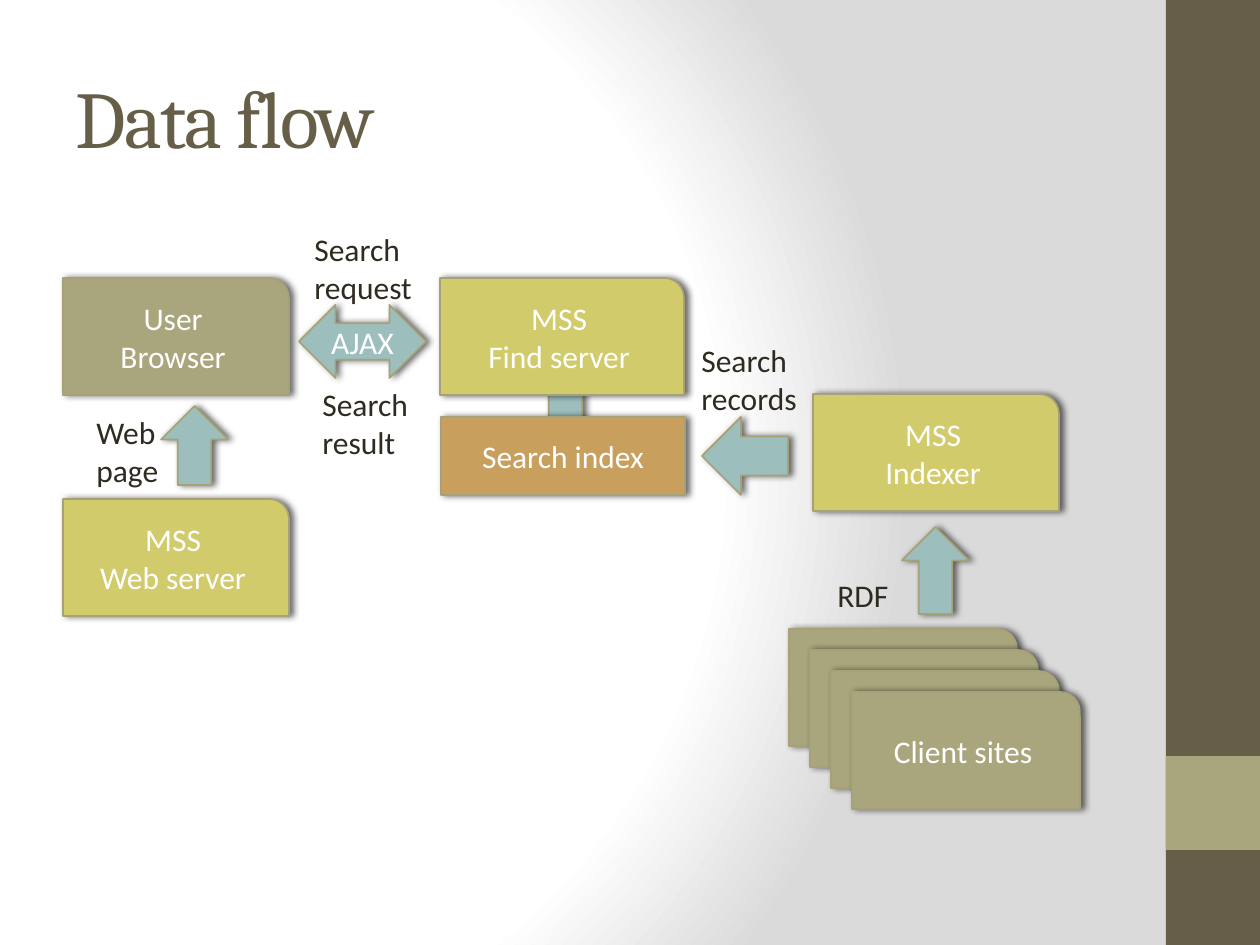
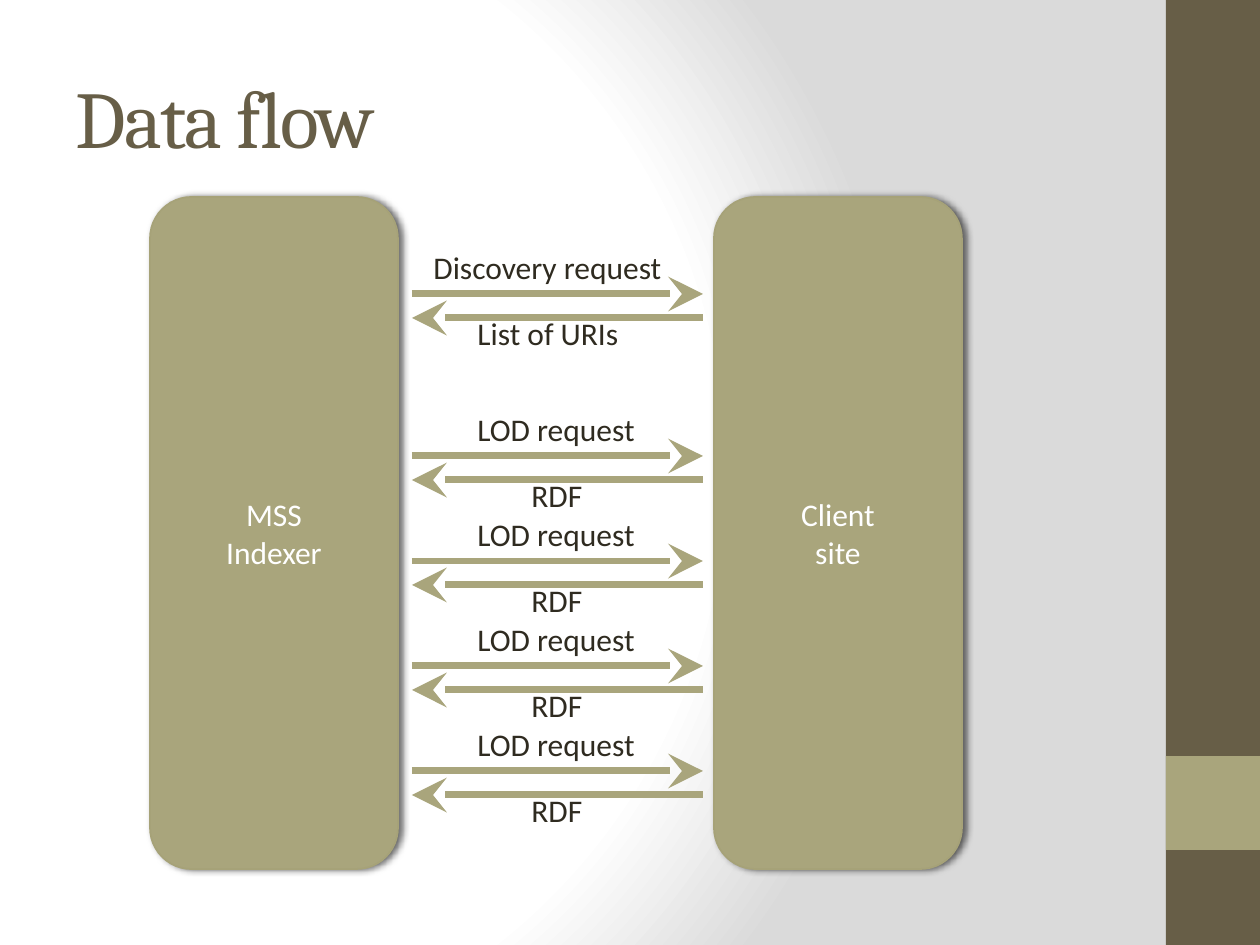
from lxml.etree import SubElement
from pptx import Presentation
from pptx.dml.color import RGBColor
from pptx.enum.shapes import MSO_CONNECTOR, MSO_SHAPE as Preset
from pptx.enum.text import MSO_ANCHOR, MSO_AUTO_SIZE, PP_ALIGN
from pptx.oxml import parse_xml
from pptx.oxml.ns import nsdecls, qn
from pptx.util import Emu, Pt

PX = 914400 / 126
COLORS = {
    "brown": "675E47", "olive": "A9A57C", "outline": "A6A278",
    "lime": "D2CB6C", "amber": "C89F5D", "teal": "9CBEBD",
    "ink": "2F2B20", "white": "FFFFFF", "gray": "DADADA", "black": "000000",
}
BODY_FONT, TITLE_FONT = "Calibri", "Cambria"

TITLE = "Data flow"
TITLE_BOX = (63, 38, 1050, 157)
BANDS = [("brown", (1166, 0, 94, 945)), ("olive", (1166, 756, 94, 94))]

# Parts of the system, back to front: preset, fill, box, text
SYSTEM_PARTS = [
    (Preset.UP_ARROW, "teal", (532, 352, 67, 87), ""),
    (Preset.ROUND_1_RECTANGLE, "olive", (63, 278, 226, 117), "User\nBrowser"),
    (Preset.ROUND_1_RECTANGLE, "lime", (63, 499, 226, 117), "MSS\nWeb server"),
    (Preset.ROUND_1_RECTANGLE, "lime", (440, 278, 244, 117), "MSS\nFind server"),
    (Preset.RECTANGLE, "amber", (441, 417, 244, 78), "Search index"),
    (Preset.UP_ARROW, "teal", (161, 406, 67, 79), ""),
    (Preset.LEFT_RIGHT_ARROW, "teal", (299, 305, 127, 73), "AJAX"),
    (Preset.ROUND_1_RECTANGLE, "lime", (813, 394, 246, 117), "MSS\nIndexer"),
    (Preset.UP_ARROW, "teal", (902, 527, 67, 87), ""),
    (Preset.LEFT_ARROW, "teal", (702, 417, 86, 78), ""),
]
CLIENT_SITES = ["", "", "", "Client sites"]
SITE_BOX, SITE_STEP = (789, 629, 228, 117), 21
FLOW_LABELS = [
    ("Search\nresult", (310, 379, 112, 89)),
    ("Search\nrequest", (302, 224, 125, 89)),
    ("Search\nrecords", (689, 335, 122, 89)),
    ("RDF", (825, 570, 77, 50)),
]
WEB_PAGE = ("Web page", (84, 407, 89, 89))

PARTIES = [("MSS\nIndexer", 150), ("Client\nsite", 714)]
PARTY_TOP, PARTY_SIZE = 197, (248, 672)
# Label text, left and width
DISCOVERY = (("Discovery request", 421, 257), ("List of URIs", 465, 169))
LOD = (("LOD request", 465, 186), ("RDF", 519, 77))
LOD_COUNT, LOD_TOP, LOD_STEP = 4, 456, 105
EXCHANGES = [(294, DISCOVERY)] + [
    (LOD_TOP + LOD_STEP * number, LOD) for number in range(LOD_COUNT)]
LANE_LEFT, LANE_RIGHT, REPLY_GAP = 412, 703, 24
REQUEST_LABEL_RISE, REPLY_LABEL_DROP, LABEL_HEIGHT = 52, 14, 50


def emu(*lengths):
    return [Emu(round(length * PX)) for length in lengths]


def rgb(color):
    return RGBColor.from_string(COLORS[color])


def style_text(frame, size, font, color, align):
    for paragraph in frame.paragraphs:
        paragraph.alignment = align
        paragraph.font.size = Pt(size)
        paragraph.font.name = font
        paragraph.font.color.rgb = rgb(color)


def add_part(shapes, preset, fill, box, text):
    """Add an outlined shape with a soft shadow and centred white text."""
    part = shapes.add_shape(preset, *emu(*box))
    part.fill.solid()
    part.fill.fore_color.rgb = rgb(fill)
    part.line.color.rgb = rgb("outline")
    part.line.width = Pt(1)
    part.shadow.inherit = False
    effects = part.element.spPr.find(qn("a:effectLst"))
    shadow = SubElement(effects, qn("a:outerShdw"), blurRad=str(Pt(4)),
                        dist=str(Pt(2)), dir="0", rotWithShape="0")
    tint = SubElement(shadow, qn("a:srgbClr"), val=COLORS["black"])
    SubElement(tint, qn("a:alpha"), val="60000")
    if text:
        frame = part.text_frame
        frame.text = text
        frame.word_wrap = False
        frame.vertical_anchor = MSO_ANCHOR.MIDDLE
        style_text(frame, 18, BODY_FONT, "white", PP_ALIGN.CENTER)


def add_label(shapes, text, box, wrap=False):
    frame = shapes.add_textbox(*emu(*box)).text_frame
    frame.text = text
    frame.word_wrap = wrap
    frame.auto_size = MSO_AUTO_SIZE.SHAPE_TO_FIT_TEXT
    style_text(frame, 18, BODY_FONT, "ink", PP_ALIGN.LEFT)


def add_message(shapes, start, end, y):
    arrow = shapes.add_connector(MSO_CONNECTOR.STRAIGHT, *emu(start, y, end, y))
    arrow.line.color.rgb = rgb("olive")
    arrow.line.width = Pt(4)
    properties = arrow.element.spPr
    SubElement(properties.find(qn("a:ln")), qn("a:tailEnd"),
               type="stealth", w="lg", len="lg")
    SubElement(properties, qn("a:effectLst"))


def add_exchange(slide, y, labels):
    """Group a request arrow at y with its reply below and both labels."""
    shapes = slide.shapes.add_group_shape().shapes
    add_message(shapes, LANE_LEFT, LANE_RIGHT, y)
    add_message(shapes, LANE_RIGHT, LANE_LEFT, y + REPLY_GAP)
    tops = (y - REQUEST_LABEL_RISE, y + REPLY_LABEL_DROP)
    for (text, left, width), top in zip(labels, tops):
        add_label(shapes, text, (left, top, width, LABEL_HEIGHT))


def add_titled_slide(deck):
    slide = deck.slides.add_slide(deck.slide_layouts[5])
    title = slide.shapes.title
    title.left, title.top, title.width, title.height = emu(*TITLE_BOX)
    title.text_frame.text = TITLE
    title.text_frame.vertical_anchor = MSO_ANCHOR.MIDDLE
    style_text(title.text_frame, 46, TITLE_FONT, "brown", PP_ALIGN.LEFT)
    return slide


def style_master(master, slide):
    """Set the shared background, title spacing and bands; bands start on slide."""
    stops = "".join(
        f'<a:gs pos="{position}"><a:srgbClr val="{COLORS[color]}"/></a:gs>'
        for position, color in ((0, "white"), (75000, "white"), (100000, "gray")))
    backdrop = parse_xml(
        f'<a:gradFill {nsdecls("a")} rotWithShape="1"><a:gsLst>{stops}</a:gsLst>'
        '<a:path path="circle">'
        '<a:fillToRect l="20000" t="50000" r="100000" b="50000"/>'
        '</a:path></a:gradFill>')
    master.background.fill.gradient()
    plain = next(master.element.iter(qn("a:gradFill")))
    plain.getparent().replace(plain, backdrop)

    title_style = next(master.element.iter(qn("p:titleStyle")))
    next(title_style.iter(qn("a:defRPr"))).set("spc", "-100")

    for number, (color, box) in enumerate(BANDS):
        band = slide.shapes.add_shape(Preset.RECTANGLE, *emu(*box))
        band.fill.solid()
        band.fill.fore_color.rgb = rgb(color)
        band.line.fill.background()
        band.shadow.inherit = False
        band.element.nvSpPr.cNvPr.set("id", str(100 + number))
        master.shapes.element.append(band.element)


def draw_system(slide):
    for part in SYSTEM_PARTS:
        add_part(slide.shapes, *part)
    left, top, width, height = SITE_BOX
    for number, text in enumerate(CLIENT_SITES):
        shift = number * SITE_STEP
        add_part(slide.shapes, Preset.ROUND_1_RECTANGLE, "olive",
                 (left + shift, top + shift, width, height), text)
    for text, box in FLOW_LABELS:
        add_label(slide.shapes, text, box)
    add_label(slide.shapes, *WEB_PAGE, wrap=True)


def draw_protocol(slide):
    for text, left in PARTIES:
        add_part(slide.shapes, Preset.ROUNDED_RECTANGLE, "olive",
                 (left, PARTY_TOP, *PARTY_SIZE), text)
    for y, labels in EXCHANGES:
        add_exchange(slide, y, labels)


def main():
    deck = Presentation()
    deck.slide_width, deck.slide_height = emu(1260, 945)
    system, protocol = add_titled_slide(deck), add_titled_slide(deck)
    style_master(deck.slide_master, system)
    draw_system(system)
    draw_protocol(protocol)
    deck.save("out.pptx")


if __name__ == "__main__":
    main()
